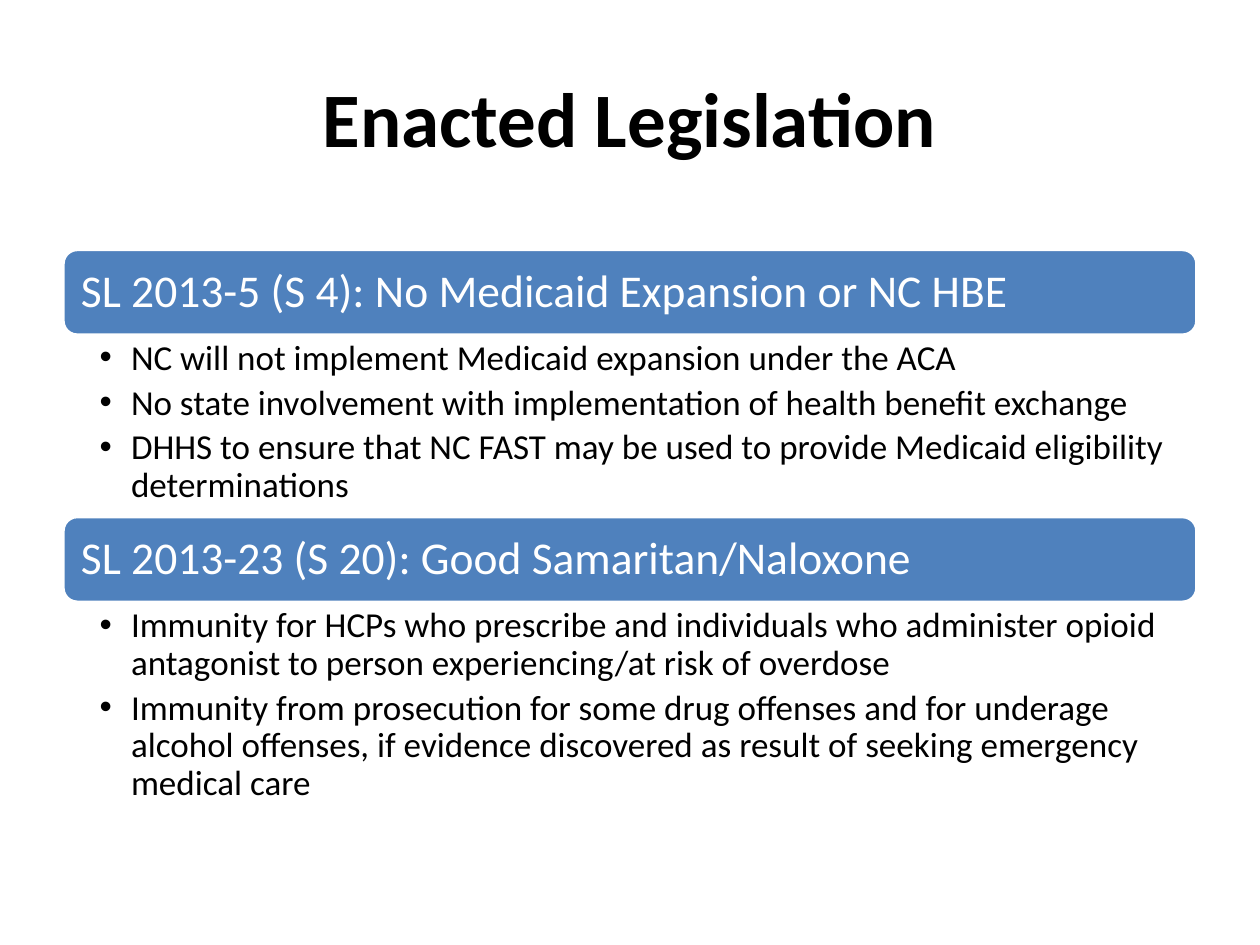
from pptx import Presentation
from pptx.dml.color import RGBColor as RGB
from pptx.enum.shapes import MSO_SHAPE as SHAPE
from pptx.enum.text import MSO_ANCHOR as ANCHOR, PP_ALIGN as ALIGN
from pptx.oxml.ns import qn
from pptx.util import Inches, Pt
from lxml.etree import SubElement

COLORS = {"blue": "4F81BD", "white": "FFFFFF", "black": "000000"}
FONT = "Calibri"
BAR = 0.68
LAWS = [
    ("SL 2013-5 (S 4): No Medicaid Expansion or NC HBE", 1.44, [
        "NC will not implement Medicaid expansion under the ACA",
        "No state involvement with implementation of health benefit exchange",
        "DHHS to ensure that NC FAST may be used to provide Medicaid eligibility determinations",
    ]),
    ("SL 2013-23 (S 20): Good Samaritan/Naloxone", 1.68, [
        "Immunity for HCPs who prescribe and individuals who administer opioid antagonist to person experiencing/at risk of overdose",
        "Immunity from prosecution for some drug offenses and for underage alcohol offenses, if evidence discovered as result of seeking emergency medical care",
    ]),
]


def color(name):
    return RGB.from_string(COLORS[name])


def add_bullet(para):
    props = para._p.get_or_add_pPr()
    props.set("marL", str(Inches(0.25)))
    props.set("indent", str(Inches(-0.25)))
    SubElement(props, qn("a:buFont")).set("typeface", "Arial")
    SubElement(props, qn("a:buChar")).set("char", "•")


def write(frame, lines, size, ink="black", bold=False, align=ALIGN.LEFT,
          anchor=ANCHOR.MIDDLE, pads=(0.1, 0.05, 0.1, 0.05),
          pitch=1.0, after=0, bullet=False):
    frame.word_wrap = True
    frame.vertical_anchor = anchor
    (frame.margin_left, frame.margin_top,
     frame.margin_right, frame.margin_bottom) = map(Inches, pads)
    for i, line in enumerate(lines):
        para = frame.add_paragraph() if i else frame.paragraphs[0]
        para.alignment = align
        para.line_spacing = pitch
        para.space_after = Pt(after)
        if bullet:
            add_bullet(para)
        run = para.add_run()
        run.text = line
        run.font.name = FONT
        run.font.size = Pt(size)
        run.font.bold = bold
        run.font.color.rgb = color(ink)


def add_title(slide, text, left, top, width, height):
    title = slide.shapes.title
    title.left, title.top = Inches(left), Inches(top)
    title.width, title.height = Inches(width), Inches(height)
    write(title.text_frame, [text], 44, bold=True, align=ALIGN.CENTER)


def add_law(slide, head, points, left, top, width, height):
    bar = slide.shapes.add_shape(SHAPE.ROUNDED_RECTANGLE, Inches(left),
                                 Inches(top), Inches(width), Inches(BAR))
    bar.shadow.inherit = False
    bar.fill.solid()
    bar.fill.fore_color.rgb = color("blue")
    bar.line.color.rgb = color("white")
    bar.line.width = Pt(2)
    write(bar.text_frame, [head], 26, ink="white", pitch=0.9,
          pads=(0.11, 0.11, 0.11, 0.11))
    body = slide.shapes.add_textbox(Inches(left), Inches(top + BAR),
                                    Inches(width), Inches(height - BAR))
    write(body.text_frame, points, 20, anchor=ANCHOR.TOP, pitch=0.9,
          after=4, bullet=True, pads=(0.29, 0.04, 0.2, 0.04))


def main():
    deck = Presentation()
    deck.slide_width, deck.slide_height = Inches(10), Inches(7.5)
    slide = deck.slides.add_slide(deck.slide_layouts[5])
    add_title(slide, "Enacted Legislation", 0.5, 0.3, 9, 1.25)
    top = 1.98
    for head, depth, points in LAWS:
        add_law(slide, head, points, 0.5, top, 9, BAR + depth)
        top += BAR + depth
    deck.save("out.pptx")


if __name__ == "__main__":
    main()
